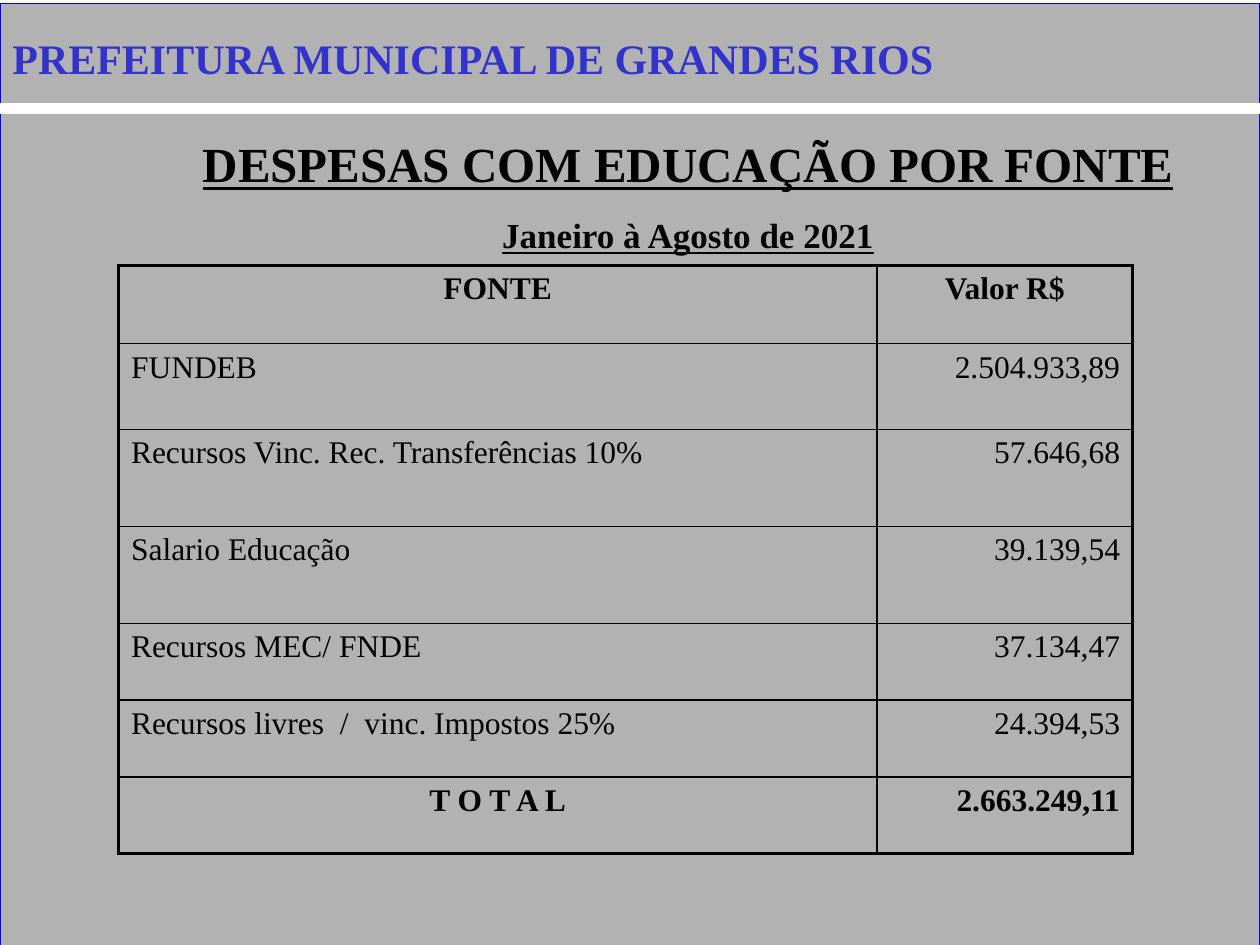
from lxml import etree
from pptx import Presentation
from pptx.dml.color import RGBColor
from pptx.enum.shapes import MSO_CONNECTOR, MSO_SHAPE
from pptx.enum.text import PP_ALIGN
from pptx.oxml.ns import qn
from pptx.util import Inches, Pt

LEFT, CENTER, RIGHT = PP_ALIGN.LEFT, PP_ALIGN.CENTER, PP_ALIGN.RIGHT
RECTANGLE = MSO_SHAPE.RECTANGLE
STRAIGHT = MSO_CONNECTOR.STRAIGHT

WIDTH, HEIGHT = 10, 7.5
BLACK, WHITE, GRAY = "000000", "FFFFFF", "B2B2B2"
BLUE, INDIGO, SHADOW = "0000FF", "3333CC", "808080"
FONT = "Times New Roman"
THICK, THIN = 2.25, 1

COLUMN_WIDTHS = [6.02, 2.03]
ROW_HEIGHTS = [0.62, 0.68, 0.77, 0.77, 0.61, 0.61, 0.61]
EXPENSES = [
    ("FONTE", "Valor R$"),
    ("FUNDEB", "2.504.933,89"),
    ("Recursos Vinc. Rec. Transferências 10%", "57.646,68"),
    ("Salario Educação", "39.139,54"),
    ("Recursos MEC/ FNDE", "37.134,47"),
    ("Recursos livres  /  vinc. Impostos 25%", "24.394,53"),
    ("T O T A L", "2.663.249,11"),
]


def color(value):
    return RGBColor.from_string(value)


def box(left, top, width, height):
    shares = (left * WIDTH, top * HEIGHT, width * WIDTH, height * HEIGHT)
    return [Inches(length) for length in shares]


def write(paragraph, text, alignment=LEFT, fill=BLACK, **font_format):
    paragraph.alignment = alignment
    run = paragraph.add_run()
    run.text = text
    run.font.color.rgb = color(fill)
    for name, value in {"name": FONT, **font_format}.items():
        setattr(run.font, name, value)
    return run


def add_background(slide):
    shape = slide.shapes.add_shape(RECTANGLE, *box(0, 0.004, 1, 1))
    shape.shadow.inherit = False
    shape.fill.solid()
    shape.fill.fore_color.rgb = color(GRAY)
    shape.line.color.rgb = color(BLUE)
    shape.line.width = Pt(0.75)


def add_divider(slide, top):
    start_x, start_y, length, _ = box(0, top, 1, 0)
    divider = slide.shapes.add_connector(STRAIGHT, start_x, start_y, length, start_y)
    divider.line.color.rgb = color(WHITE)
    divider.line.width = Pt(6)
    etree.SubElement(divider._element.spPr, qn("a:effectLst"))


def add_text_frame(slide, area):
    frame = slide.shapes.add_textbox(*box(*area)).text_frame
    frame.word_wrap = True
    return frame


def add_text_shadow(run):
    effects = etree.Element(qn("a:effectLst"))
    shadow = etree.SubElement(
        effects, qn("a:outerShdw"), dist="35921", dir="2700000", algn="ctr"
    )
    etree.SubElement(shadow, qn("a:srgbClr"), val=SHADOW)
    run.font._element.find(qn("a:solidFill")).addnext(effects)


def add_header(slide):
    frame = add_text_frame(slide, (0, 0.028, 0.949, 0.067))
    run = write(frame.paragraphs[0], "PREFEITURA MUNICIPAL DE GRANDES RIOS",
                fill=INDIGO, size=Pt(24), bold=True)
    add_text_shadow(run)


def add_titles(slide):
    frame = add_text_frame(slide, (0.142, 0.104, 0.808, 0.735))
    titles = [("DESPESAS COM EDUCAÇÃO POR FONTE", 28), ("Janeiro à Agosto de 2021", 20)]
    for index, (text, size) in enumerate(titles):
        paragraph = frame.add_paragraph() if index else frame.paragraphs[0]
        paragraph.line_spacing = 1.5
        write(paragraph, text, CENTER, size=Pt(size), bold=True, underline=True)


def set_borders(cell, widths):
    properties = cell._tc.get_or_add_tcPr()
    for index, (side, width) in enumerate(widths.items()):
        line = etree.Element(qn(f"a:ln{side}"), w=str(Pt(width)))
        fill = etree.SubElement(line, qn("a:solidFill"))
        etree.SubElement(fill, qn("a:srgbClr"), val=BLACK)
        properties.insert(index, line)


def add_expense_table(slide):
    area = box(0.094, 0.281, sum(COLUMN_WIDTHS) / WIDTH, sum(ROW_HEIGHTS) / HEIGHT)
    table = slide.shapes.add_table(len(EXPENSES), len(COLUMN_WIDTHS), *area).table
    table.first_row = table.horz_banding = False
    for column, width in zip(table.columns, COLUMN_WIDTHS):
        column.width = Inches(width)
    for row, height in zip(table.rows, ROW_HEIGHTS):
        row.height = Inches(height)
    last_row, last_column = len(EXPENSES) - 1, len(COLUMN_WIDTHS) - 1
    for row, values in enumerate(EXPENSES):
        emphasized = row in (0, last_row)
        alignments = (CENTER if emphasized else LEFT, CENTER if row == 0 else RIGHT)
        for column, text in enumerate(values):
            cell = table.cell(row, column)
            cell.fill.background()
            write(cell.text_frame.paragraphs[0], text, alignments[column],
                  size=Pt(18), bold=emphasized)
            edges = {"L": column == 0, "R": column == last_column,
                     "T": row == 0, "B": row == last_row}
            set_borders(cell, {side: THICK if outer else THIN
                               for side, outer in edges.items()})


def main():
    presentation = Presentation()
    presentation.slide_width = Inches(WIDTH)
    presentation.slide_height = Inches(HEIGHT)
    slide = presentation.slides.add_slide(presentation.slide_layouts[6])
    add_background(slide)
    add_divider(slide, 0.115)
    add_titles(slide)
    add_expense_table(slide)
    add_header(slide)
    presentation.save("out.pptx")


if __name__ == "__main__":
    main()
